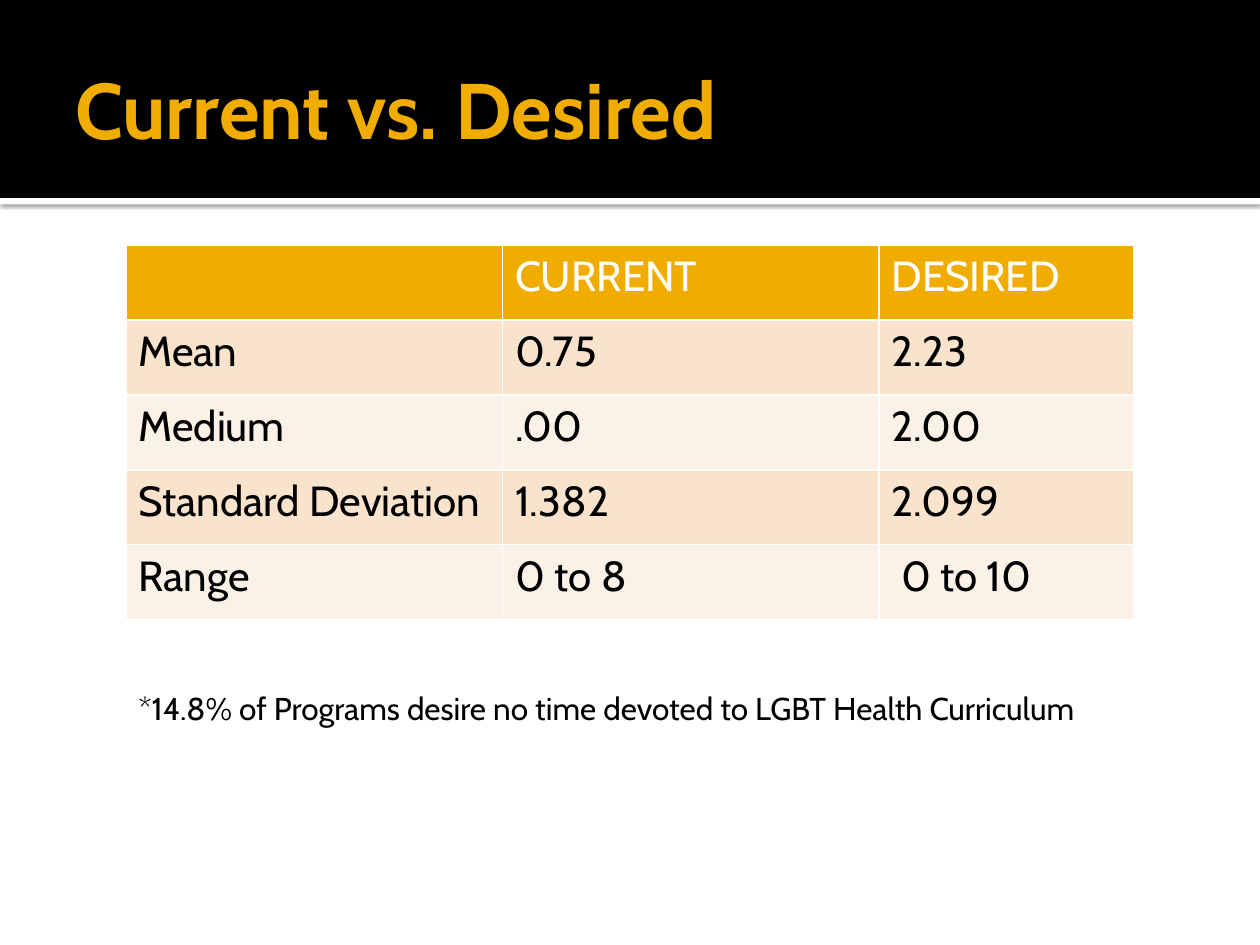
from lxml import etree
from pptx import Presentation
from pptx.dml.color import RGBColor
from pptx.enum import shapes, text
from pptx.oxml import ns
from pptx.util import Cm, Pt

TITLE = "Current vs. Desired"
ROWS = [
    ("", "CURRENT", "DESIRED"),
    ("Mean", "0.75", "2.23"),
    ("Medium", ".00", "2.00"),
    ("Standard Deviation", "1.382", "2.099"),
    ("Range", "0 to 8", " 0 to 10"),
]
FOOTNOTE = "*14.8% of Programs desire no time devoted to LGBT Health Curriculum"

BLACK = RGBColor(0x00, 0x00, 0x00)
WHITE = RGBColor(0xFF, 0xFF, 0xFF)
GOLD = RGBColor(0xF0, 0xAD, 0x00)
BANDS = [RGBColor(0xF9, 0xE3, 0xCC), RGBColor(0xFC, 0xF1, 0xE7)]

FONT = "Cabin"
SLIDE_W, SLIDE_H = Cm(25.4), Cm(19.05)
HEADER_H, STRIP_H = Cm(3.99), Cm(0.13)
TABLE_LEFT, TABLE_TOP = Cm(2.54), Cm(4.94)
COLUMN_WIDTHS = [Cm(7.59), Cm(7.59), Cm(5.13)]
ROW_H = Cm(1.51)


def write(frame, content, size, color, bold=False):
    paragraph = frame.paragraphs[0]
    paragraph.text = content
    formats = {"name": FONT, "size": Pt(size), "bold": bold}
    for key, value in formats.items():
        setattr(paragraph.font, key, value)
    paragraph.font.color.rgb = color
    return paragraph


def add_band(slide, top, height, color):
    """Add a full-width bar behind the title placeholder."""
    band = slide.shapes.add_shape(
        shapes.MSO_SHAPE.RECTANGLE, 0, top, SLIDE_W, height)
    band.shadow.inherit = False
    band.fill.solid()
    band.fill.fore_color.rgb = color
    band.line.fill.background()
    slide.shapes.title._element.addprevious(band._element)
    return band


def add_shadow(shape):
    effects = shape._element.spPr.find(ns.qn("a:effectLst"))
    shadow = etree.SubElement(
        effects, ns.qn("a:outerShdw"), blurRad=str(Pt(2.5)),
        dist=str(Pt(0.8)), dir="5400000", algn="t", rotWithShape="0")
    color = etree.SubElement(shadow, ns.qn("a:srgbClr"), val=str(BLACK))
    etree.SubElement(color, ns.qn("a:alpha"), val="60000")


def set_borders(cell):
    properties = cell._tc.get_or_add_tcPr()
    for position, side in enumerate(("lnL", "lnR", "lnT", "lnB")):
        line = etree.Element(ns.qn(f"a:{side}"), w=str(Pt(1)))
        fill = etree.SubElement(line, ns.qn("a:solidFill"))
        etree.SubElement(fill, ns.qn("a:srgbClr"), val=str(WHITE))
        properties.insert(position, line)


def add_comparison(slide):
    table = slide.shapes.add_table(
        len(ROWS), len(COLUMN_WIDTHS), TABLE_LEFT, TABLE_TOP,
        sum(COLUMN_WIDTHS), ROW_H * len(ROWS)).table
    for column, width in zip(table.columns, COLUMN_WIDTHS):
        column.width = width
    for r, values in enumerate(ROWS):
        table.rows[r].height = ROW_H
        for c, value in enumerate(values):
            cell = table.cell(r, c)
            cell.fill.solid()
            cell.fill.fore_color.rgb = BANDS[(r - 1) % 2] if r else GOLD
            set_borders(cell)
            write(cell.text_frame, value, 24, BLACK if r else WHITE)


def main():
    deck = Presentation()
    deck.slide_width, deck.slide_height = SLIDE_W, SLIDE_H
    slide = deck.slides.add_slide(deck.slide_layouts[5])

    add_shadow(add_band(slide, HEADER_H, STRIP_H, WHITE))
    add_band(slide, 0, HEADER_H, BLACK)

    title = slide.shapes.title
    title.left, title.top = Cm(1.27), Cm(0.43)
    title.width, title.height = Cm(22.86), Cm(3.48)
    frame_formats = {
        "margin_left": Cm(0.25), "margin_right": Cm(0.13),
        "margin_top": Cm(0.13), "margin_bottom": Cm(0.13),
        "vertical_anchor": text.MSO_ANCHOR.MIDDLE,
        "auto_size": text.MSO_AUTO_SIZE.NONE,
    }
    for key, value in frame_formats.items():
        setattr(title.text_frame, key, value)
    heading = write(title.text_frame, TITLE, 45, GOLD, bold=True)
    heading.alignment = text.PP_ALIGN.LEFT

    add_comparison(slide)

    footnote = slide.shapes.add_textbox(
        TABLE_LEFT, Cm(13.77), Cm(21.59), Cm(1.02)).text_frame
    footnote.word_wrap = True
    footnote.auto_size = text.MSO_AUTO_SIZE.SHAPE_TO_FIT_TEXT
    write(footnote, FOOTNOTE, 18, BLACK)

    deck.save("out.pptx")


if __name__ == "__main__":
    main()
